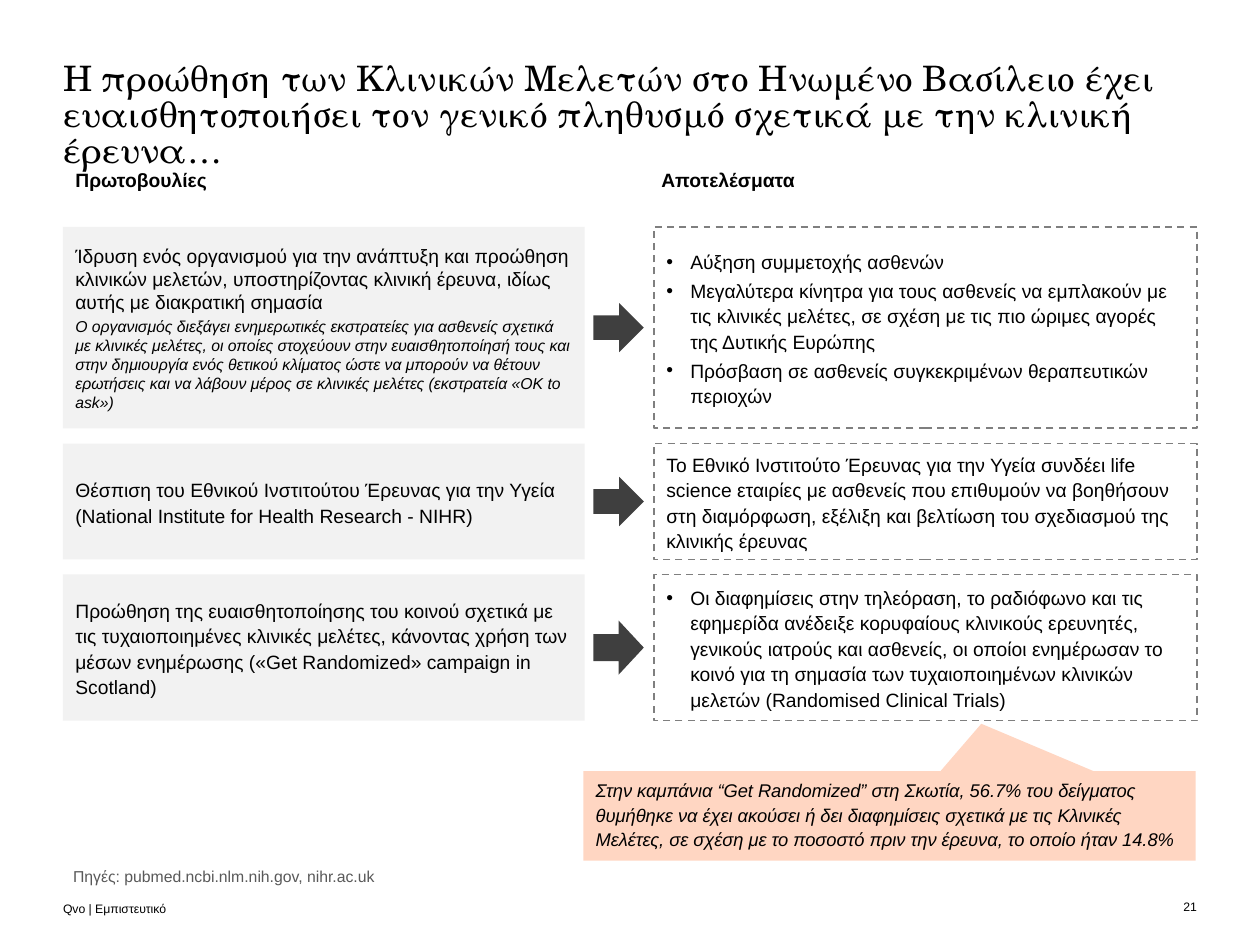
from lxml import etree
from pptx import Presentation
from pptx.dml.color import RGBColor
from pptx.enum import dml, shapes, text
from pptx.oxml import ns
from pptx.util import Inches, Pt

BLACK = RGBColor(0, 0, 0)
WHITE = RGBColor(255, 255, 255)
DARK = RGBColor(0x3F, 0x3F, 0x3F)
GREY = RGBColor(0x59, 0x59, 0x59)
EDGE = RGBColor(0x7F, 0x7F, 0x7F)
PALE = RGBColor(0xF2, 0xF2, 0xF2)
PEACH = RGBColor(0xFF, 0xD6, 0xC2)

KIND = shapes.MSO_SHAPE
TOP, MID, LOW = (text.MSO_ANCHOR.TOP, text.MSO_ANCHOR.MIDDLE,
                 text.MSO_ANCHOR.BOTTOM)
LEFT, RIGHT = text.PP_ALIGN.LEFT, text.PP_ALIGN.RIGHT
PAD = (0.1, 0.05, 0.1, 0.05)
BARE = (0, 0, 0, 0)
GAP = 0.12

ROWS = [
    (1.6, 0.39, 1.0, True,
     ["Ίδρυση ενός οργανισμού για την ανάπτυξη και προώθηση κλινικών μελετών, "
      "υποστηρίζοντας κλινική έρευνα, ιδίως αυτής με διακρατική σημασία",
      "Ο οργανισμός διεξάγει ενημερωτικές εκστρατείες για ασθενείς σχετικά με "
      "κλινικές μελέτες, οι οποίες στοχεύουν στην ευαισθητοποίησή τους και στην "
      "δημιουργία ενός θετικού κλίματος ώστε να μπορούν να θέτουν ερωτήσεις και "
      "να λάβουν μέρος σε κλινικές μελέτες (εκστρατεία «OK to ask»)"],
     ["Αύξηση συμμετοχής ασθενών",
      "Μεγαλύτερα κίνητρα για τους ασθενείς να εμπλακούν με τις κλινικές "
      "μελέτες, σε σχέση με τις πιο ώριμες αγορές της Δυτικής Ευρώπης",
      "Πρόσβαση σε ασθενείς συγκεκριμένων θεραπευτικών περιοχών"]),
    (0.92, 0.39, 1.1, False,
     ["Θέσπιση του Εθνικού Ινστιτούτου Έρευνας για την Υγεία (National "
      "Institute for Health Research - NIHR)"],
     ["Το Εθνικό Ινστιτούτο Έρευνας για την Υγεία συνδέει life science "
      "εταιρίες με ασθενείς που επιθυμούν να βοηθήσουν στη διαμόρφωση, εξέλιξη "
      "και βελτίωση του σχεδιασμού της κλινικής έρευνας"]),
    (1.16, 0.43, 1.1, True,
     ["Προώθηση της ευαισθητοποίησης του κοινού σχετικά με τις τυχαιοποιημένες "
      "κλινικές μελέτες, κάνοντας χρήση των μέσων ενημέρωσης («Get Randomized» "
      "campaign in Scotland)"],
     ["Οι διαφημίσεις στην τηλεόραση, το ραδιόφωνο και τις εφημερίδα ανέδειξε "
      "κορυφαίους κλινικούς ερευνητές, γενικούς ιατρούς και ασθενείς, οι οποίοι "
      "ενημέρωσαν το κοινό για τη σημασία των τυχαιοποιημένων κλινικών μελετών "
      "(Randomised Clinical Trials)"]),
]


class Deck:
    """Holds the style and the current slide."""

    base = {"name": "Arial", "size": Pt(11), "bold": False, "italic": False}

    def __init__(self):
        self.prs = Presentation()
        self.prs.slide_width, self.prs.slide_height = Inches(10), Inches(7.5)
        self.slide = self.prs.slides.add_slide(self.prs.slide_layouts[1])

    def bullet(self, para, dot):
        props = para._p.get_or_add_pPr()
        indent = Inches(0.19) if dot else 0
        props.set("marL", str(indent))
        props.set("indent", str(-indent))
        if dot:
            tint = etree.SubElement(props, ns.qn("a:buClr"))
            etree.SubElement(tint, ns.qn("a:srgbClr"), val=str(BLACK))
            etree.SubElement(props, ns.qn("a:buFont"), typeface="Arial")
            etree.SubElement(props, ns.qn("a:buChar"), char="•")
        else:
            etree.SubElement(props, ns.qn("a:buNone"))

    def prose(self, shape, lines, anchor=MID, pad=PAD, lead=1.0, align=LEFT,
              dot=False, color=BLACK, fonts=({},)):
        frame = shape.text_frame
        sides = dict(zip(("margin_left", "margin_top", "margin_right",
                          "margin_bottom"), map(Inches, pad)))
        look = {"word_wrap": True, "auto_size": text.MSO_AUTO_SIZE.NONE,
                "vertical_anchor": anchor, **sides}
        for key, val in look.items():
            setattr(frame, key, val)
        for i, line in enumerate(lines):
            para = frame.add_paragraph() if i else frame.paragraphs[0]
            self.bullet(para, dot)
            flow = {"alignment": align, "line_spacing": lead,
                    "space_before": Pt(2 if i else 0)}
            for key, val in flow.items():
                setattr(para, key, val)
            run = para.add_run()
            run.text = line
            style = {**self.base, **fonts[min(i, len(fonts) - 1)]}
            for key, val in style.items():
                setattr(run.font, key, val)
            run.font.color.rgb = color

    def holder(self, index, box, line, **style):
        shape = self.slide.placeholders[index]
        keys = ("left", "top", "width", "height")
        for key, val in zip(keys, map(Inches, box)):
            setattr(shape, key, val)
        self.prose(shape, [line], **style)

    def label(self, box, line, **style):
        shape = self.slide.shapes.add_textbox(*map(Inches, box))
        self.prose(shape, [line], **style)

    def block(self, kind, box, fill, edge=None):
        shape = self.slide.shapes.add_shape(kind, *map(Inches, box))
        shape.shadow.inherit = False
        shape.fill.solid()
        shape.fill.fore_color.rgb = fill
        if edge is None:
            shape.line.fill.background()
        else:
            shape.line.color.rgb = edge
            shape.line.width = Pt(1)
            shape.line.dash_style = dml.MSO_LINE.DASH
        return shape

    def row(self, top, data):
        tall, tip, lead, dot, cause, effect = data
        left = self.block(KIND.RECTANGLE, (0.5, top, 4.14, tall), PALE)
        self.prose(left, cause, lead=lead,
                   fonts=({}, {"size": Pt(9), "italic": True}))
        mid = top + (tall - tip) / 2
        self.block(KIND.RIGHT_ARROW, (4.71, mid, 0.4, tip), DARK)
        right = self.block(KIND.RECTANGLE, (5.19, top, 4.31, tall), WHITE, EDGE)
        self.prose(right, effect, lead=1.1, dot=dot)

    def callout(self, box, tip, line):
        shape = self.block(KIND.RECTANGULAR_CALLOUT, box, PEACH)
        for i, val in enumerate(tip):
            shape.adjustments[i] = val
        self.prose(shape, [line], anchor=TOP, lead=1.1,
                   fonts=({"size": Pt(10.5), "italic": True},))


def main():
    deck = Deck()
    deck.holder(0, (0.5, 0.5, 9, 0.51),
                "Η προώθηση των Κλινικών Μελετών στο Ηνωμένο Βασίλειο έχει "
                "ευαισθητοποιήσει τον γενικό πληθυσμό σχετικά με την κλινική "
                "έρευνα…", anchor=TOP, pad=BARE, lead=0.85,
                fonts=({"name": "TeX Gyre Schola", "size": Pt(20)},))
    deck.holder(1, (0.5, 6.86, 9, 0.19),
                "Πηγές: pubmed.ncbi.nlm.nih.gov, nihr.ac.uk",
                pad=(0.08, 0, 0, 0), color=GREY, fonts=({"size": Pt(9)},))
    bold, tiny = ({"bold": True},), ({"size": Pt(7)},)
    deck.label((0.5, 1.29, 3.16, 0.28), "Πρωτοβουλίες", fonts=bold)
    deck.label((5.15, 1.29, 2.36, 0.28), "Αποτελέσματα", fonts=bold)
    top = 1.8
    for data in ROWS:
        deck.row(top, data)
        top += data[0] + GAP
    deck.callout((4.63, 6.12, 4.86, 0.71), (0.15, -1.03),
                 "Στην καμπάνια “Get Randomized” στη Σκωτία, 56.7% του δείγματος "
                 "θυμήθηκε να έχει ακούσει ή δει διαφημίσεις σχετικά με τις "
                 "Κλινικές Μελέτες, σε σχέση με το ποσοστό πριν την έρευνα, το "
                 "οποίο ήταν 14.8%")
    deck.label((0.5, 7.12, 4.35, 0.15), "Qvo | Εμπιστευτικό", anchor=LOW,
               pad=BARE, fonts=tiny)
    deck.label((9.29, 7.12, 0.21, 0.15), "21", pad=BARE, align=RIGHT, fonts=tiny)
    deck.prs.save("out.pptx")


if __name__ == "__main__":
    main()
